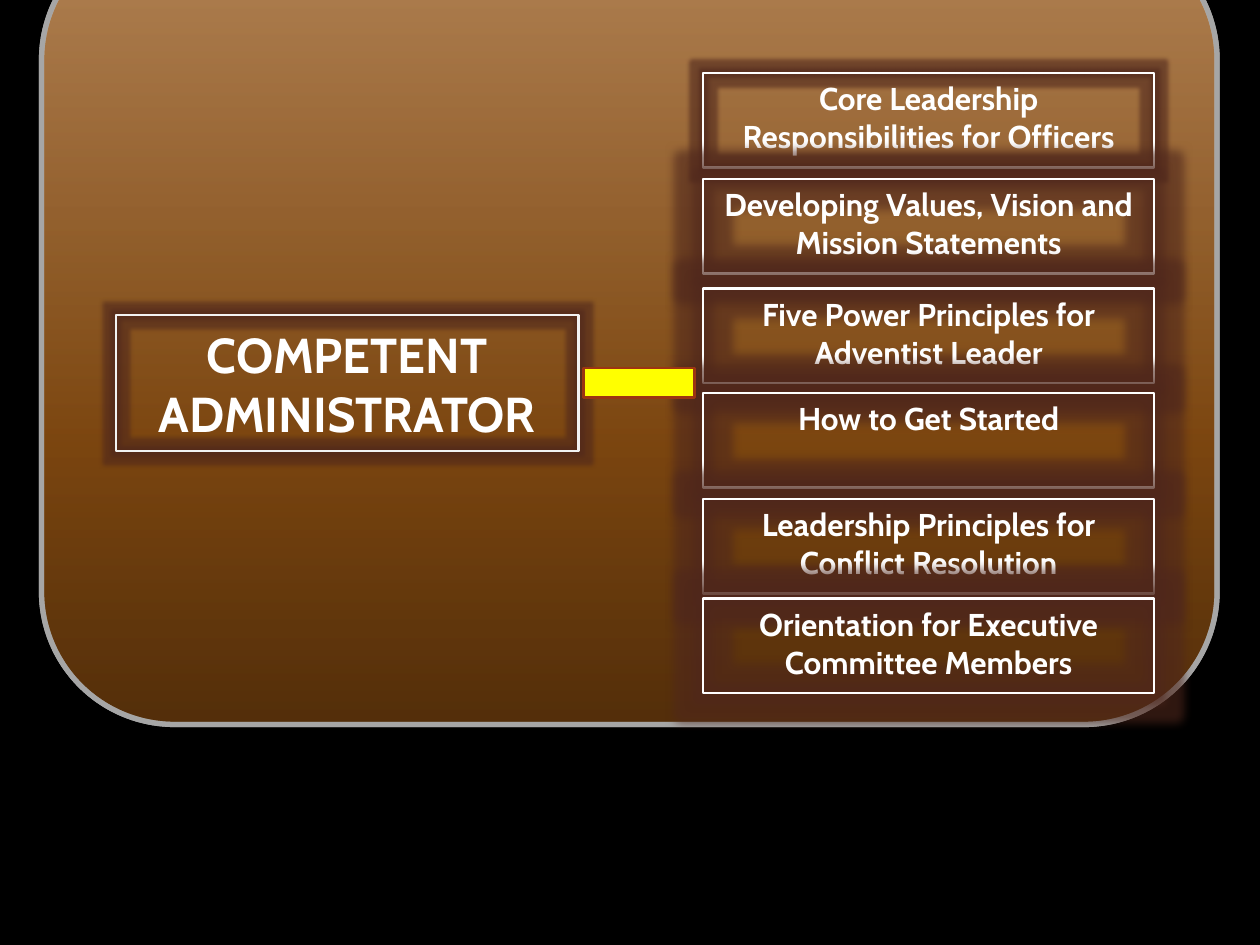
import pptx
import pptx.util
import pptx.dml.color
import pptx.enum.shapes
import pptx.enum.text
import pptx.oxml
import pptx.oxml.ns

Inches, Pt = pptx.util.Inches, pptx.util.Pt
RGB = pptx.dml.color.RGBColor.from_string
SHAPE = pptx.enum.shapes.MSO_SHAPE
ALIGN = pptx.enum.text.PP_ALIGN
ANCHOR = pptx.enum.text.MSO_ANCHOR

# Content
ROLE = "COMPETENT ADMINISTRATOR"
TOPICS = [  # top edge, text, glow radius in points
    (0.58, "Core Leadership Responsibilities for Officers", 5),
    (1.42, "Developing Values, Vision and Mission Statements", 11),
    (2.29, "Five Power Principles for Adventist Leader", 11),
    (3.12, "How to Get Started", 11),
    (3.96, "Leadership Principles for Conflict Resolution", 11),
    (4.75, "Orientation for Executive Committee Members", 11),
]
TOPIC_LEFT, TOPIC_W, TOPIC_H = 5.58, 3.58, 0.75
PANEL_LAYERS = 2

THEME = {
    "font": "Cabin", "title_size": 28, "topic_size": 18,
    "back": "000000", "text": "FFFFFF",
    "title_line": "F2F2F2", "topic_line": "FFFFFF", "panel_line": "A6A6A6",
    "link": "FFFF00", "link_line": "9C3511",
    "glow": "4F271C", "glow_alpha": 60,
    "panel": [(0, "EEB071"), (65, "A55C14"), (100, "6E3D0D")],
    "panel_alpha": 50,
}


def color_xml(color, alpha):
    return f'<a:srgbClr val="{color}"><a:alpha val="{alpha * 1000}"/></a:srgbClr>'


def parse(xml):
    return pptx.oxml.parse_xml(
        xml.replace(">", f' {pptx.oxml.ns.nsdecls("a")}>', 1))


def add_shape(slide, kind, box, line, width):
    sp = slide.shapes.add_shape(kind, *(Inches(v) for v in box))
    sp.shadow.inherit = False
    sp.fill.background()
    sp.line.color.rgb = RGB(line)
    sp.line.width = Pt(width)
    return sp


def add_panel(slide):
    sp = add_shape(slide, SHAPE.ROUNDED_RECTANGLE, (0.33, -0.58, 9.33, 6.33),
                   THEME["panel_line"], 3)
    stops = "".join(
        f'<a:gs pos="{pos * 1000}">{color_xml(color, THEME["panel_alpha"])}</a:gs>'
        for pos, color in THEME["panel"])
    grad = parse(f'<a:gradFill><a:gsLst>{stops}</a:gsLst>'
                 '<a:lin ang="5400000" scaled="0"/></a:gradFill>')
    fill = sp._element.spPr.find(pptx.oxml.ns.qn("a:noFill"))
    fill.getparent().replace(fill, grad)


def add_box(slide, box, text, size, line, glow, anchor):
    sp = add_shape(slide, SHAPE.RECTANGLE, box, line, 1.5)
    effects = sp._element.spPr.find(pptx.oxml.ns.qn("a:effectLst"))
    effects.append(parse(f'<a:glow rad="{Pt(glow)}">'
                         f'{color_xml(THEME["glow"], THEME["glow_alpha"])}</a:glow>'))
    tf = sp.text_frame
    tf.word_wrap = True
    tf.vertical_anchor = anchor
    tf.text = text
    p = tf.paragraphs[0]
    p.alignment = ALIGN.CENTER
    font = p.runs[0].font
    font.name, font.size, font.bold = THEME["font"], Pt(size), True
    font.color.rgb = RGB(THEME["text"])


def add_topic(slide, topic):
    top, text, glow = topic
    add_box(slide, (TOPIC_LEFT, top, TOPIC_W, TOPIC_H), text,
            THEME["topic_size"], THEME["topic_line"], glow, ANCHOR.TOP)


def main():
    prs = pptx.Presentation()
    prs.slide_width, prs.slide_height = Inches(10), Inches(7.5)
    slide = prs.slides.add_slide(prs.slide_layouts[6])
    slide.background.fill.solid()
    slide.background.fill.fore_color.rgb = RGB(THEME["back"])

    # Translucent panel layers
    for _ in range(PANEL_LAYERS):
        add_panel(slide)

    # Role on the left
    add_box(slide, (0.92, 2.5, 3.67, 1.08), ROLE, THEME["title_size"],
            THEME["title_line"], 5, ANCHOR.MIDDLE)

    # Topics on the right, with the link bar below the last one
    for topic in TOPICS[:-1]:
        add_topic(slide, topic)
    link = add_shape(slide, SHAPE.MATH_MINUS, (4.47, 2.54, 1.2, 1),
                     THEME["link_line"], 1.5)
    link.fill.solid()
    link.fill.fore_color.rgb = RGB(THEME["link"])
    add_topic(slide, TOPICS[-1])

    prs.save("out.pptx")


if __name__ == "__main__":
    main()
